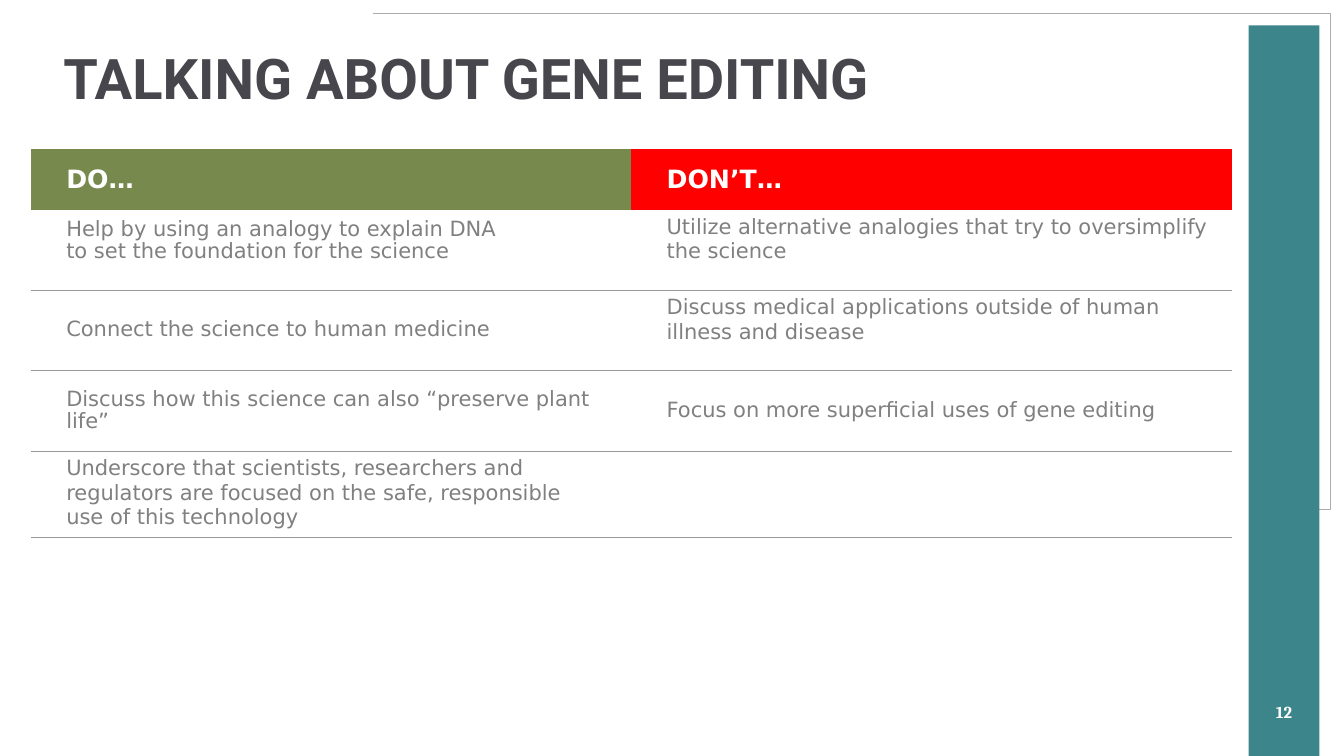
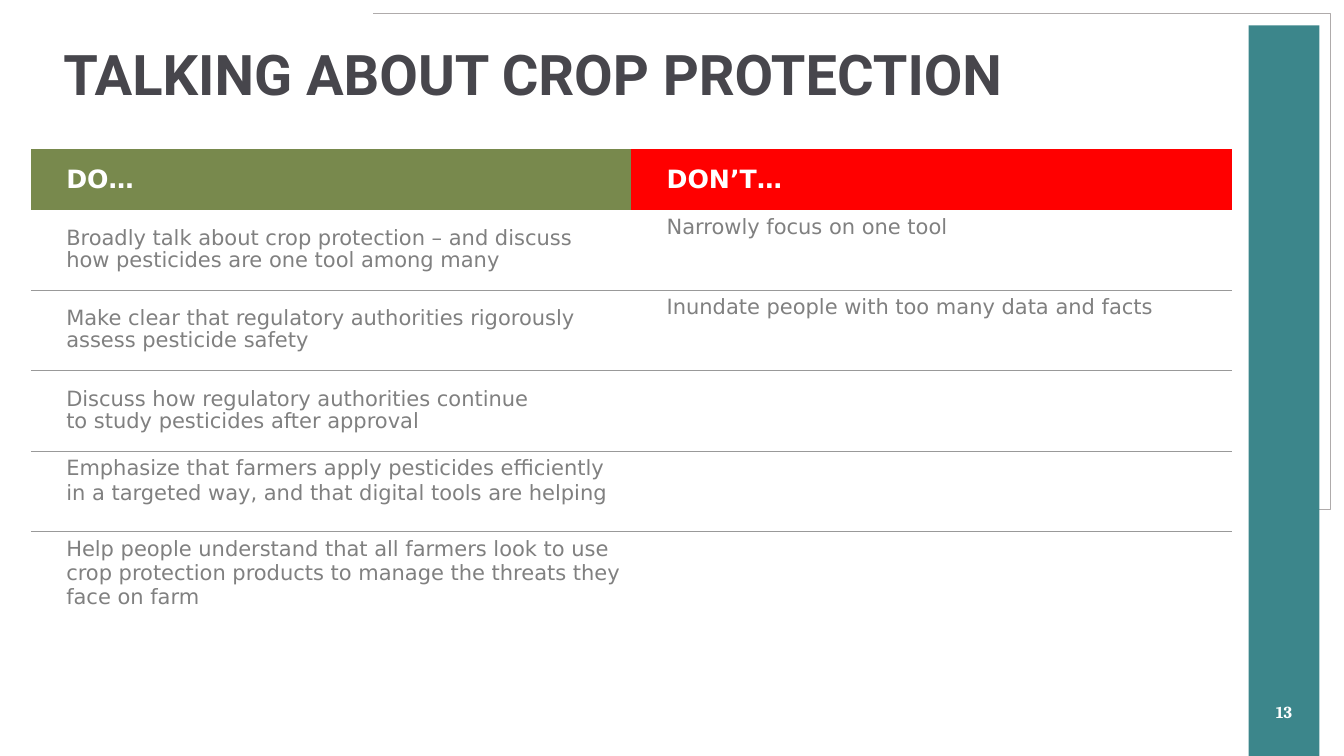
import pptx
import pptx.dml.color
import pptx.enum.shapes
import pptx.enum.text
import pptx.oxml
import pptx.oxml.ns
import pptx.util

Cm = pptx.util.Cm
Pt = pptx.util.Pt
RGB = pptx.dml.color.RGBColor.from_string
MID = pptx.enum.text.MSO_ANCHOR.MIDDLE
TOP = pptx.enum.text.MSO_ANCHOR.TOP
MAIN = pptx.oxml.ns.nsdecls("a")

theme = {
    "band": RGB("3C868B"),
    "frame": RGB("AFABAB"),
    "rule": "999999",
    "heads": [RGB("78894D"), RGB("FF0000")],
    "title": {"name": "Roboto", "size": Pt(40), "bold": True, "color": RGB("47464C")},
    "page": {"name": "Cambria", "size": Pt(12), "bold": True, "color": RGB("FFFFFF")},
    "head": {"name": "DejaVu Sans", "size": Pt(18), "bold": True, "color": RGB("FFFFFF")},
    "body": {"name": "DejaVu Sans", "size": Pt(15), "bold": False, "color": RGB("808080")},
}

forms = {
    "head": {"anchor": MID, "pad": 0.13, "space": 1.0},
    "mid": {"anchor": MID, "pad": 0.25, "space": 0.9},
    "high": {"anchor": TOP, "pad": 0.25, "space": 0.9},
    "top": {"anchor": TOP, "pad": 0.13, "space": 1.0},
}

heads = (("head", "DO…"), ("head", "DON’T…"))
blank = ("top", "")

decks = [
    {
        "page": "12",
        "title": "TALKING ABOUT GENE EDITING",
        "top": 0.2,
        "rows": [
            heads,
            (("high", "Help by using an analogy to explain DNA\vto set the foundation for the science"),
             ("top", "Utilize alternative analogies that try to oversimplify the science")),
            (("mid", "Connect the science to human medicine"),
             ("top", "Discuss medical applications outside of human illness and disease")),
            (("mid", "Discuss how this science can also “preserve plant life”"),
             ("mid", "Focus on more superficial uses of gene editing")),
            (("top", "Underscore that scientists, researchers and\vregulators are focused on the safe, responsible\vuse of this technology"),
             blank),
            (blank, blank),
        ],
    },
    {
        "page": "13",
        "title": "TALKING ABOUT CROP PROTECTION",
        "top": 0.1,
        "rows": [
            heads,
            (("mid", "Broadly talk about crop protection – and discuss\vhow pesticides are one tool among many"),
             ("top", "Narrowly focus on one tool")),
            (("mid", "Make clear that regulatory authorities rigorously\vassess pesticide safety"),
             ("top", "Inundate people with too many data and facts")),
            (("mid", "Discuss how regulatory authorities continue\vto study pesticides after approval"),
             blank),
            (("top", "Emphasize that farmers apply pesticides efficiently\vin a targeted way, and that digital tools are helping"),
             blank),
            (("top", "Help people understand that all farmers look to use crop protection products to manage the threats they face on farm"),
             blank),
        ],
    },
]


def style(para, look):
    for key, val in look.items():
        if key == "color":
            para.font.color.rgb = val
        else:
            setattr(para.font, key, val)


def label(slide, area, text, look, **form):
    box = slide.shapes.add_textbox(*[Cm(val) for val in area])
    frame = box.text_frame
    frame.word_wrap = True
    frame.vertical_anchor = MID
    para = frame.paragraphs[0]
    para.text = text
    for key, val in form.items():
        setattr(para, key, val)
    style(para, look)


deck = pptx.Presentation()
deck.slide_width = Cm(33.87)
deck.slide_height = Cm(19.05)

for data in decks:
    slide = deck.slides.add_slide(deck.slide_layouts[6])

    path = slide.shapes.build_freeform(Cm(33.25), Cm(12.83))
    path.add_line_segments(
        [(Cm(33.53), Cm(12.83)), (Cm(33.53), Cm(0.33)), (Cm(9.4), Cm(0.33))],
        close=False,
    )
    edge = path.convert_to_shape()
    edge.shadow.inherit = False
    edge.fill.background()
    edge.line.color.rgb = theme["frame"]
    edge.line.width = Pt(0.25)

    band = slide.shapes.add_shape(
        pptx.enum.shapes.MSO_SHAPE.RECTANGLE, Cm(31.47), Cm(0.64), Cm(1.78), Cm(18.41)
    )
    band.shadow.inherit = False
    band.fill.solid()
    band.fill.fore_color.rgb = theme["band"]
    band.line.fill.background()

    label(slide, (31.8, 17.42, 1.12, 1.02), data["page"], theme["page"],
          alignment=pptx.enum.text.PP_ALIGN.CENTER)
    label(slide, (1.35, data["top"], 29.69, 3.68), data["title"], theme["title"],
          line_spacing=0.9)

    rows = data["rows"]
    table = slide.shapes.add_table(
        len(rows), 2, Cm(0.78), Cm(3.76), Cm(30.26), Cm(11.67)
    ).table
    table.first_row = False
    table.horz_banding = False
    for col in table.columns:
        col.width = Cm(15.13)

    for r, row in enumerate(rows):
        table.rows[r].height = Cm(2.03 if r else 1.52)
        for c, (kind, text) in enumerate(row):
            cell = table.cell(r, c)
            form = forms[kind]
            sides = {
                "vertical_anchor": form["anchor"],
                "margin_left": Cm(0.89),
                "margin_right": Cm(0.25),
                "margin_top": Cm(form["pad"]),
                "margin_bottom": Cm(form["pad"]),
            }
            for key, val in sides.items():
                setattr(cell, key, val)

            ruled = {"lnT": 1 < r, "lnB": 0 < r < len(rows) - 1}
            for tag in ("lnL", "lnR", "lnT", "lnB"):
                paint = "<a:noFill/>"
                if ruled.get(tag):
                    paint = f'<a:solidFill><a:srgbClr val="{theme["rule"]}"/></a:solidFill>'
                line = f'<a:{tag} {MAIN} w="{Pt(0.75)}">{paint}</a:{tag}>'
                cell._tc.get_or_add_tcPr().append(pptx.oxml.parse_xml(line))

            if kind == "head":
                cell.fill.solid()
                cell.fill.fore_color.rgb = theme["heads"][c]
            else:
                cell.fill.background()

            para = cell.text_frame.paragraphs[0]
            para.text = text
            para.line_spacing = form["space"]
            if r == 1:
                para.space_after = Pt(6)
            style(para, theme["head" if kind == "head" else "body"])

deck.save("out.pptx")
